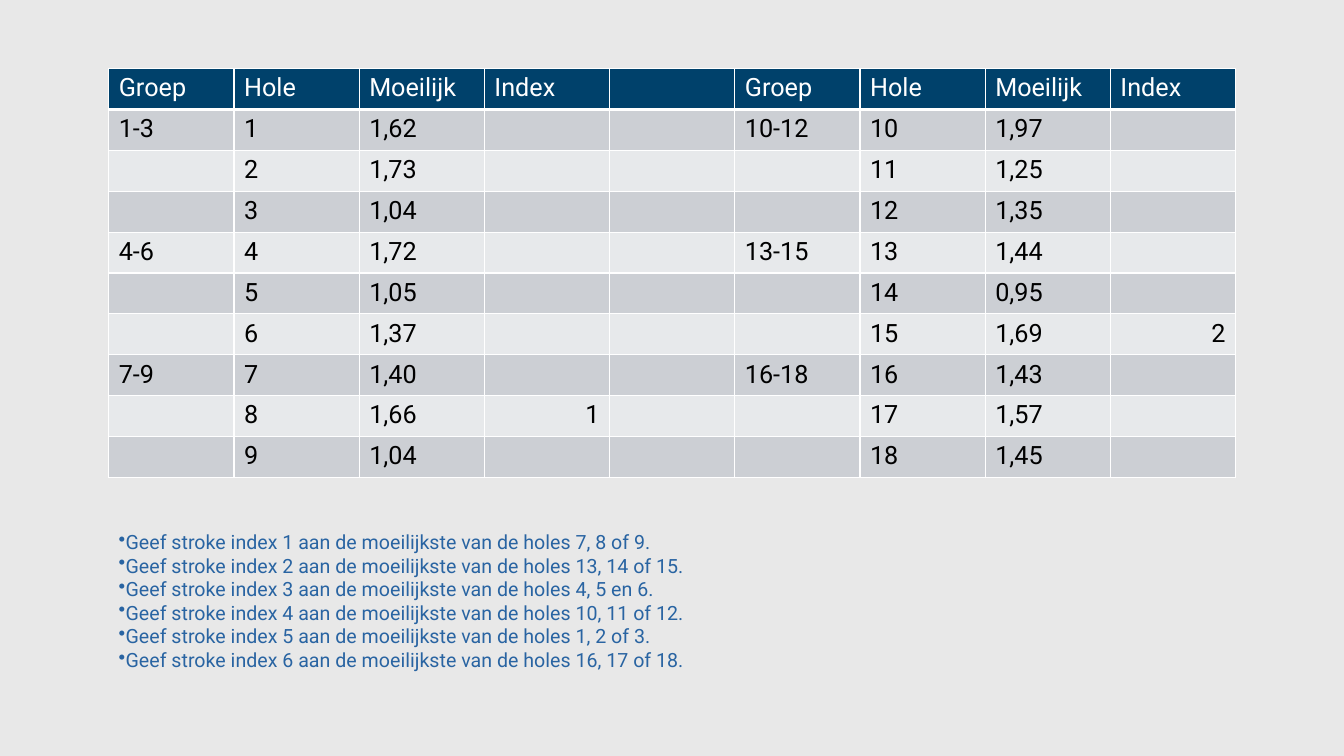
from lxml.etree import SubElement
from pptx import Presentation
from pptx.dml.color import RGBColor
from pptx.enum.text import MSO_AUTO_SIZE, PP_ALIGN
from pptx.oxml.ns import qn
from pptx.util import Pt

FONT = "Roboto"
HEADER = ["Groep", "Hole", "Moeilijk", "Index"]
DIFFICULTY = [
    "1,62", "1,73", "1,04", "1,72", "1,05", "1,37", "1,40", "1,66", "1,04",
    "1,97", "1,25", "1,35", "1,44", "0,95", "1,69", "1,43", "1,57", "1,45",
]
STROKE_INDEX = {8: "1", 15: "2"}
INDEX_HOLES = [
    "7, 8 of 9", "13, 14 of 15", "4, 5 en 6",
    "10, 11 of 12", "1, 2 of 3", "16, 17 of 18",
]


def color(code):
    """Turn a hex string into a colour."""
    return RGBColor.from_string(code)


def style_paragraph(para, size, code):
    """Set the font of a paragraph."""
    para.font.name = FONT
    para.font.size = Pt(size)
    para.font.bold = False
    para.font.color.rgb = color(code)


def add_border(cell, side, width):
    """Draw one white border of a cell."""
    line = SubElement(cell._tc.get_or_add_tcPr(), qn(f"a:{side}"), w=str(Pt(width)))
    fill = SubElement(line, qn("a:solidFill"))
    SubElement(fill, qn("a:srgbClr"), val="FFFFFF")


def hole_cells(hole):
    """Give the group, number, difficulty and index of a hole."""
    group = f"{hole}-{hole + 2}" if hole % 3 == 1 else ""
    return [group, str(hole), DIFFICULTY[hole - 1], STROKE_INDEX.get(hole, "")]


def add_hole_table(page, left, top, width, height):
    """Place the table with both nines side by side."""
    rows = [HEADER + [""] + HEADER]
    rows += [hole_cells(hole) + [""] + hole_cells(hole + 9) for hole in range(1, 10)]
    columns = len(rows[0])
    table = page.shapes.add_table(
        len(rows), columns, Pt(left), Pt(top), Pt(width), Pt(height)
    ).table
    for column in table.columns:
        column.width = Pt(width / columns)
    for number, texts in enumerate(rows):
        table.rows[number].height = Pt(height / len(rows))
        header = number == 0
        shade = "00416B" if header else "CCCFD4" if number % 2 else "E7E9EB"
        for position, text in enumerate(texts):
            cell = table.cell(number, position)
            for side in ("lnL", "lnR", "lnT", "lnB"):
                thick = (header and side == "lnB") or (number == 1 and side == "lnT")
                add_border(cell, side, 3 if thick else 1)
            cell.fill.solid()
            cell.fill.fore_color.rgb = color(shade)
            cell.text = text
            para = cell.text_frame.paragraphs[0]
            style_paragraph(para, 18, "FFFFFF" if header else "000000")
            if not header and position % 5 == 3:
                para.alignment = PP_ALIGN.RIGHT


def add_index_rules(page, left, top, width, height):
    """Place the bulleted rules for giving out the stroke indexes."""
    box = page.shapes.add_textbox(Pt(left), Pt(top), Pt(width), Pt(height))
    frame = box.text_frame
    frame.word_wrap = True
    frame.auto_size = MSO_AUTO_SIZE.SHAPE_TO_FIT_TEXT
    frame.text = "\n".join(
        f"Geef stroke index {index} aan de moeilijkste van de holes {holes}."
        for index, holes in enumerate(INDEX_HOLES, 1)
    )
    for para in frame.paragraphs:
        style_paragraph(para, 14, "2964A2")
        properties = para._p.get_or_add_pPr()
        bullet = SubElement(properties, qn("a:buChar"), char="•")
        properties.insert(0, bullet)


def build_deck():
    """Build and save the slide."""
    deck = Presentation()
    deck.slide_width, deck.slide_height = Pt(960), Pt(540)
    page = deck.slides.add_slide(deck.slide_layouts[6])
    page.background.fill.solid()
    page.background.fill.fore_color.rgb = color("E8E8E8")
    add_hole_table(page, 77.7, 49, 805, 292)
    add_index_rules(page, 77.7, 375, 805, 109)
    deck.save("out.pptx")


if __name__ == "__main__":
    build_deck()
